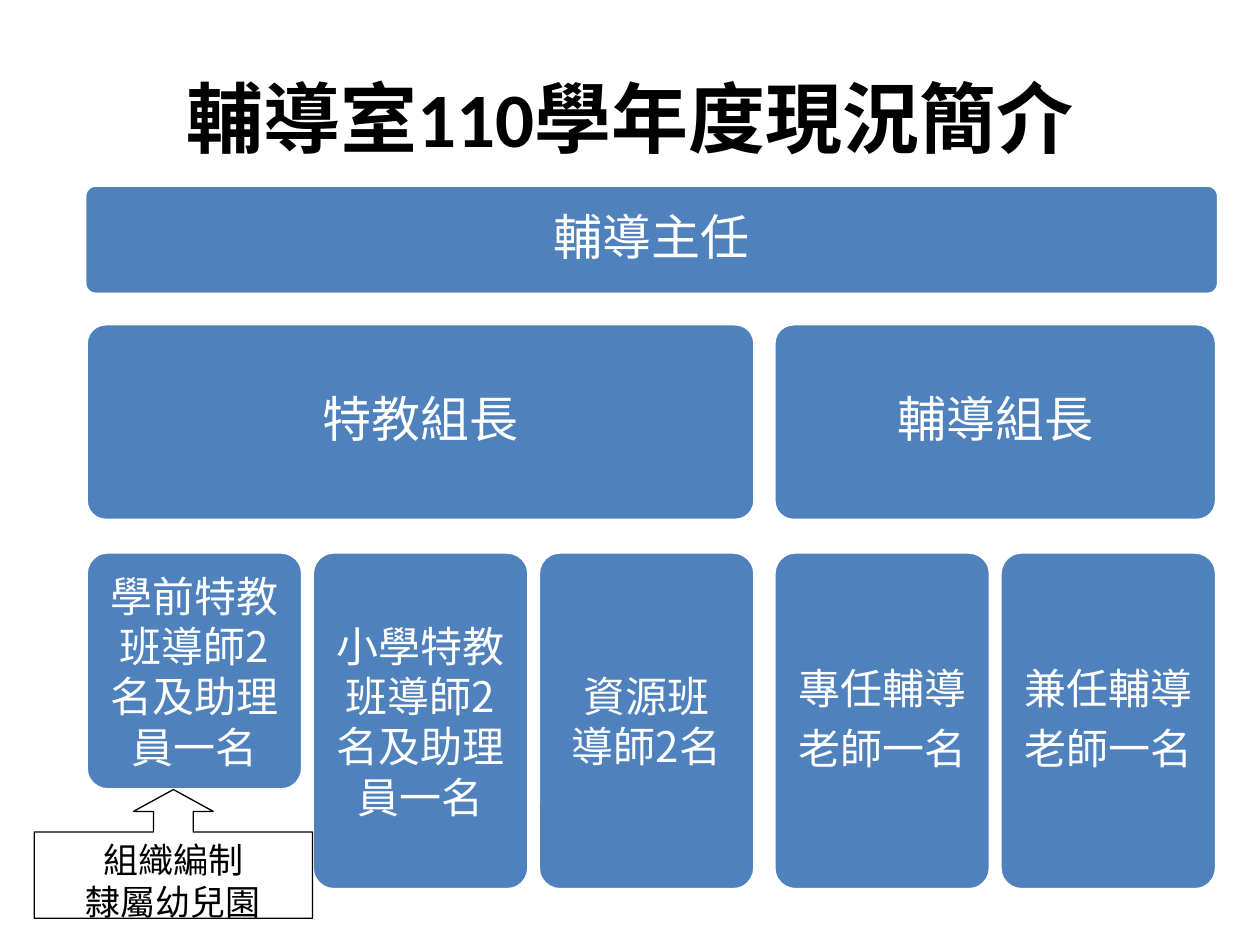
from dataclasses import dataclass

from pptx import Presentation
from pptx.dml.color import RGBColor
from pptx.enum.shapes import MSO_SHAPE
from pptx.enum.text import MSO_ANCHOR, PP_ALIGN
from pptx.util import Pt

ROUNDED = MSO_SHAPE.ROUNDED_RECTANGLE
CALLOUT = MSO_SHAPE.UP_ARROW_CALLOUT
CENTER = PP_ALIGN.CENTER
TOP, MIDDLE = MSO_ANCHOR.TOP, MSO_ANCHOR.MIDDLE

COLORS = {"blue": "4F81BD", "white": "FFFFFF", "black": "000000"}
TITLE_FONT, BODY_FONT = "Calibri", "Noto Sans CJK SC"

# Chart grid, in points
LEFT = 49.2
COLUMN_WIDTH, COLUMN_GAP, TEAM_GAP = 123.8, 5.4, 10.8
LEADER_TOP, LEADER_HEIGHT = 185, 112.4
MEMBER_TOP, MEMBER_HEIGHT = 315.4, 193


@dataclass
class Member:
    lines: list[str]
    height: float = MEMBER_HEIGHT
    spaced: bool = False


@dataclass
class Team:
    leader: str
    members: list[Member]


TEAMS = [
    Team("特教組長", [
        Member(["學前特教班導師2名及助理員一名"], height=136),
        Member(["小學特教班導師2名及助理員一名"]),
        Member(["資源班", "導師2名"]),
    ]),
    Team("輔導組長", [
        Member(["專任輔導", "老師一名"], spaced=True),
        Member(["兼任輔導", "老師一名"], spaced=True),
    ]),
]


def color(name: str) -> RGBColor:
    return RGBColor.from_string(COLORS[name])


def write(shape, lines: list[str], size: float, ink: str, font: str = BODY_FONT,
          anchor=MIDDLE, bold: bool = False, spaced: bool = False) -> None:
    frame = shape.text_frame
    frame.word_wrap = True
    frame.vertical_anchor = anchor
    frame.text = "\n".join(lines)
    for paragraph in frame.paragraphs:
        paragraph.alignment = CENTER
        if spaced:
            paragraph.line_spacing = 0.9
            paragraph.space_after = Pt(size * 0.35)
        paragraph.font.name = font
        paragraph.font.size = Pt(size)
        paragraph.font.bold = bold
        paragraph.font.color.rgb = color(ink)


def add_shape(slide, kind, left: float, top: float, width: float, height: float,
              fill: str, line: str, line_width: float):
    shape = slide.shapes.add_shape(kind, Pt(left), Pt(top), Pt(width), Pt(height))
    shape.shadow.inherit = False
    shape.fill.solid()
    shape.fill.fore_color.rgb = color(fill)
    shape.line.color.rgb = color(line)
    shape.line.width = Pt(line_width)
    return shape


def add_post(slide, lines: list[str], left: float, top: float, width: float,
             height: float, size: float, spaced: bool) -> None:
    post = add_shape(slide, ROUNDED, left, top, width, height, "blue", "white", 2)
    post.adjustments[0] = 0.1
    frame = post.text_frame
    inset = Pt(size * 0.3)
    frame.margin_left = frame.margin_right = inset
    frame.margin_top = frame.margin_bottom = inset
    write(post, lines, size, "white", spaced=spaced)


def add_team(slide, team: Team, left: float) -> float:
    """Draw a leader above the members and return the team's width."""
    pitch = COLUMN_WIDTH + COLUMN_GAP
    width = len(team.members) * pitch - COLUMN_GAP
    add_post(slide, [team.leader], left, LEADER_TOP, width, LEADER_HEIGHT, 28, True)
    for index, member in enumerate(team.members):
        add_post(slide, member.lines, left + index * pitch, MEMBER_TOP,
                 COLUMN_WIDTH, member.height, 24, member.spaced)
    return width


def main() -> None:
    presentation = Presentation()
    presentation.slide_width, presentation.slide_height = Pt(720), Pt(540)
    slide = presentation.slides.add_slide(presentation.slide_layouts[6])

    # Title
    title = slide.shapes.add_textbox(Pt(36), Pt(21.6), Pt(648), Pt(90))
    write(title, ["輔導室110學年度現況簡介"], 44, "black", TITLE_FONT, bold=True)

    # Director and the two teams
    add_post(slide, ["輔導主任"], 48.4, 105.8, 648, 62.4, 28, True)
    left = LEFT
    for team in TEAMS:
        left += add_team(slide, team, left) + TEAM_GAP

    # Note under the preschool post
    note = add_shape(slide, CALLOUT, 19.6, 451.2, 159, 73.6, "white", "black", 0.75)
    for index, value in enumerate((0.31, 0.31, 0.17, 0.67)):
        note.adjustments[index] = value
    write(note, ["組織編制", "隸屬幼兒園"], 20, "black", anchor=TOP)

    presentation.save("out.pptx")


if __name__ == "__main__":
    main()
